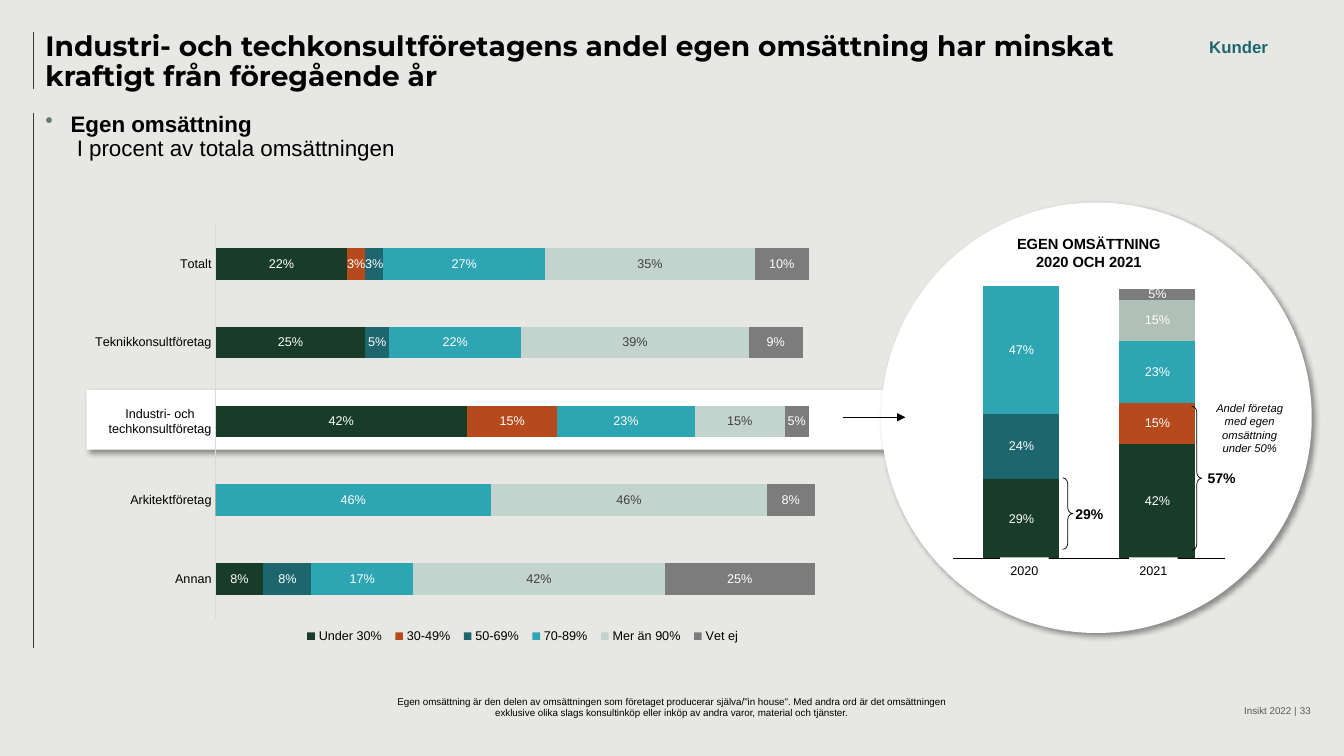
"""Build the slide on consultancies' share of own turnover."""
from lxml import etree
from pptx import Presentation
from pptx import util as u
from pptx.chart.data import CategoryChartData
from pptx.dml.color import RGBColor
from pptx.enum import chart as ch, shapes, text
from pptx.oxml import ns

Inches, Pt = u.Inches, u.Pt
BLACK = RGBColor(0x00, 0x00, 0x00)
WHITE = RGBColor(0xFF, 0xFF, 0xFF)
PAPER = RGBColor(0xE7, 0xE8, 0xE4)
RULE = RGBColor(0x32, 0x3E, 0x39)
AXIS = RGBColor(0xD9, 0xD9, 0xD9)
DARK = RGBColor(0x40, 0x40, 0x40)
FOOTER = RGBColor(0x59, 0x59, 0x59)
FOREST = RGBColor(0x19, 0x3C, 0x29)
RUST = RGBColor(0xB7, 0x4A, 0x1D)
PETROL = RGBColor(0x1D, 0x66, 0x6E)
TEAL = RGBColor(0x2E, 0xA5, 0xB3)
MIST = RGBColor(0xC3, 0xD4, 0xCF)
SAGE = RGBColor(0xB0, 0xBF, 0xB7)
GREY = RGBColor(0x7C, 0x7C, 0x7C)
CENTER, RIGHT = text.PP_ALIGN.CENTER, text.PP_ALIGN.RIGHT

COMPANIES = ["Totalt", "Teknikkonsultföretag", "Industri- och\ntechkonsultföretag",
             "Arkitektföretag", "Annan"]
BY_COMPANY = [
    ("Under 30%", [0.22, 0.25, 0.42, 0, 0.08], FOREST, WHITE, {}),
    ("30-49%", [0.03, 0, 0.15, 0, 0], RUST, WHITE, {}),
    ("50-69%", [0.03, 0.04, 0, 0, 0.08], PETROL, WHITE, {1: "5%"}),
    ("70-89%", [0.27, 0.22, 0.23, 0.46, 0.17], TEAL, WHITE, {}),
    ("Mer än 90%", [0.35, 0.38, 0.15, 0.46, 0.42], MIST, DARK, {1: "39%"}),
    ("Vet ej", [0.09, 0.09, 0.04, 0.08, 0.25], GREY, WHITE, {0: "10%", 2: "5%"}),
]
YEARS = ["2020", "2021"]
BY_YEAR = [
    ("Under 30%", [0.29, 0.42], FOREST, WHITE, {}),
    ("30-49%", [0, 0.15], RUST, WHITE, {}),
    ("50-69%", [0.24, 0], PETROL, WHITE, {}),
    ("70-89%", [0.47, 0.23], TEAL, WHITE, {}),
    ("Mer än 90%", [0, 0.15], SAGE, WHITE, {}),
    ("Vet ej", [0, 0.04], GREY, WHITE, {1: "5%"}),
]


def add_xml(parent, tag, **attrs):
    """Append an XML element and return it."""
    return etree.SubElement(parent, ns.qn(tag), attrs)


def set_font(font, size, color=BLACK, bold=False, italic=False, name="Arial"):
    """Format a font."""
    font.name, font.size, font.bold, font.italic = name, Pt(size), bold, italic
    font.color.rgb = color


def add_run(p, content, size, **style):
    """Add one formatted run to a paragraph."""
    r = p.add_run()
    r.text = content
    set_font(r.font, size, **style)


def add_text(s, box, content, size, align=CENTER, inset=True, **style):
    """Add a wrapped text box with one run and return its paragraph."""
    tf = s.shapes.add_textbox(*map(Inches, box)).text_frame
    tf.word_wrap = True
    if not inset:
        clear_insets(tf)
    p = tf.paragraphs[0]
    p.alignment = align
    add_run(p, content, size, **style)
    return p


def clear_insets(tf):
    """Remove the inner margins of a text frame."""
    tf.margin_left = tf.margin_top = tf.margin_right = tf.margin_bottom = 0


def add_line(s, start, end, color, arrow=False):
    """Add a thin straight line, with an arrowhead if asked."""
    c = s.shapes.add_connector(shapes.MSO_CONNECTOR.STRAIGHT, *map(Inches, start + end))
    c.line.color.rgb, c.line.width = color, Pt(0.5)
    if arrow:
        add_xml(c.line._get_or_add_ln(), "a:tailEnd", type="triangle")
    add_xml(c._element.spPr, "a:effectLst")


def add_panel(s, kind, box, shadow=False):
    """Add a white borderless shape."""
    sp = s.shapes.add_shape(kind, *map(Inches, box))
    sp.shadow.inherit = False
    sp.fill.solid()
    sp.fill.fore_color.rgb = WHITE
    sp.line.fill.background()
    if shadow:
        effects = sp._element.spPr.find(ns.qn("a:effectLst"))
        outer = add_xml(effects, "a:outerShdw", blurRad=str(Pt(4)), dist=str(Pt(3)),
                        dir="2700000", algn="tl", rotWithShape="0")
        add_xml(add_xml(outer, "a:srgbClr", val="000000"), "a:alpha", val="40000")
    return sp


def add_year(s, left, year):
    """Add a year label below a column."""
    sp = add_panel(s, shapes.MSO_SHAPE.RECTANGLE, (left, 5.53, 0.48, 0.25))
    sp.text_frame.word_wrap = False
    p = sp.text_frame.paragraphs[0]
    p.alignment = CENTER
    add_run(p, year, 9)


def add_brace(s, box):
    """Add a thin right brace."""
    sp = s.shapes.add_shape(shapes.MSO_SHAPE.RIGHT_BRACE, *map(Inches, box))
    sp.shadow.inherit = False
    sp.adjustments[0], sp.adjustments[1] = 0.59, 0.5
    sp.fill.background()
    sp.line.color.rgb, sp.line.width = BLACK, Pt(0.5)


def set_layout(parent, index, target=None, **fractions):
    """Fix the place of a chart part as fractions of the chart."""
    for old in parent.findall(ns.qn("c:layout")):
        parent.remove(old)
    layout = etree.Element(ns.qn("c:layout"))
    parent.insert(index, layout)
    manual = add_xml(layout, "c:manualLayout")
    if target:
        add_xml(manual, "c:layoutTarget", val=target)
    for name in ("xMode", "yMode"):
        add_xml(manual, f"c:{name}", val="edge")
    for name, value in fractions.items():
        add_xml(manual, f"c:{name}", val=str(value))


def add_stacked(s, kind, box, cats, rows, gap, axis_color):
    """Add a stacked percentage chart and return it."""
    data = CategoryChartData(number_format="0%")
    data.categories = cats
    for name, values, *_ in rows:
        data.add_series(name, values)
    chart = s.shapes.add_chart(kind, *map(Inches, box), data).chart
    set_font(chart.font, 10)
    chart.has_title = chart.has_legend = False
    plot = chart.plots[0]
    plot.gap_width, plot.overlap, plot.vary_by_categories = gap, 100, False
    values_axis, cat_axis = chart.value_axis, chart.category_axis
    values_axis.minimum_scale, values_axis.maximum_scale = 0, 1
    values_axis.has_major_gridlines = values_axis.visible = False
    cat_axis.major_tick_mark = ch.XL_TICK_MARK.NONE
    cat_axis.format.line.color.rgb, cat_axis.format.line.width = axis_color, Pt(0.75)
    set_font(cat_axis.tick_labels.font, 9)
    for series, (_, _, color, label_color, custom) in zip(plot.series, rows):
        series.format.fill.solid()
        series.format.fill.fore_color.rgb = color
        labels = series.data_labels
        labels.show_value, labels.position = True, ch.XL_LABEL_POSITION.CENTER
        labels.number_format, labels.number_format_is_linked = "0%;;", False
        set_font(labels.font, 9, label_color)
        for index, content in custom.items():
            label = series.points[index].data_label
            add_run(label.text_frame.paragraphs[0], content, 9, color=label_color)
            label.position = ch.XL_LABEL_POSITION.CENTER
    return chart


def add_heading(s):
    """Add the title and the bulleted chart heading."""
    title = s.shapes.title
    title.left, title.top, title.width, title.height = map(Inches, (0.45, 0.32, 10.86, 0.56))
    tf = title.text_frame
    clear_insets(tf)
    tf.word_wrap, tf.auto_size = True, text.MSO_AUTO_SIZE.NONE
    tf.vertical_anchor = text.MSO_ANCHOR.TOP
    p = tf.paragraphs[0]
    p.alignment, p.line_spacing = text.PP_ALIGN.LEFT, 0.9
    add_run(p, "Industri- och techkonsultföretagens andel egen omsättning har minskat "
            "kraftigt från föregående år", 20, bold=True, name="Montserrat")
    p = add_text(s, (0.45, 1.12, 8.52, 0.56), "Egen omsättning", 16,
                 text.PP_ALIGN.LEFT, inset=False, bold=True)
    p.line_spacing = 0.9
    p.add_line_break()
    add_xml(p._p.find(ns.qn("a:br")), "a:rPr", sz="1600")
    add_run(p, " I procent av totala omsättningen", 16)
    pPr = p._p.get_or_add_pPr()
    pPr.set("marL", str(Inches(0.25)))
    pPr.set("indent", str(Inches(-0.25)))
    add_xml(add_xml(pPr, "a:buClr"), "a:srgbClr", val="657B71")
    add_xml(pPr, "a:buChar", char="•")


def main():
    """Build and save the slide."""
    prs = Presentation()
    prs.slide_width, prs.slide_height = Inches(13.33), Inches(7.5)
    s = prs.slides.add_slide(prs.slide_layouts[5])
    s.background.fill.solid()
    s.background.fill.fore_color.rgb = PAPER
    add_heading(s)
    for top, bottom in ((0.32, 0.88), (1.12, 6.43)):
        add_line(s, (0.33, top), (0.33, bottom), RULE)
    add_panel(s, shapes.MSO_SHAPE.RECTANGLE, (0.86, 3.87, 8.14, 0.59), shadow=True)
    add_panel(s, shapes.MSO_SHAPE.OVAL, (8.74, 2.01, 4.27, 4.27), shadow=True)
    bars = add_stacked(s, ch.XL_CHART_TYPE.BAR_STACKED, (0.8, 2.14, 7.43, 4.39),
                       COMPANIES, BY_COMPANY, 150, AXIS)
    bars.category_axis.reverse_order = bars.has_legend = True
    bars.legend.position = ch.XL_LEGEND_POSITION.BOTTOM
    bars.legend.include_in_layout = False
    set_font(bars.legend.font, 9)
    set_layout(bars.legend._element, 1, x=0.29, y=0.92, w=0.6, h=0.06)
    set_layout(bars._chartSpace.chart.plotArea, 0, "inner", x=0.18, y=0.02, w=0.8, h=0.89)
    columns = add_stacked(s, ch.XL_CHART_TYPE.COLUMN_STACKED, (9.4, 2.78, 2.81, 3),
                          YEARS, BY_YEAR, 79, BLACK)
    columns.category_axis.tick_label_position = ch.XL_TICK_LABEL_POSITION.NONE
    set_layout(columns._chartSpace.chart.plotArea, 0, "inner", x=0.02, y=0.02, w=0.96, h=0.9)
    for left, year in zip((9.92, 11.2), YEARS):
        add_year(s, left, year)
    add_brace(s, (10.54, 4.74, 0.1, 0.71))
    add_brace(s, (11.82, 4.03, 0.1, 1.43))
    add_text(s, (10.55, 4.97, 0.51, 0.27), "29%", 10, bold=True)
    add_text(s, (11.86, 4.61, 0.51, 0.27), "57%", 10, bold=True)
    add_line(s, (8.36, 4.14), (8.98, 4.14), BLACK, arrow=True)
    add_text(s, (11.92, 3.93, 0.95, 0.64), "Andel företag med egen omsättning under 50%",
             8, italic=True)
    add_text(s, (9.97, 2.28, 1.66, 0.45), "EGEN OMSÄTTNING 2020 OCH 2021", 10.5, bold=True)
    add_text(s, (11.57, 0.32, 1.43, 0.3), "Kunder", 12, color=PETROL, bold=True)
    add_text(s, (3.78, 6.85, 5.76, 0.34), "Egen omsättning är den delen av omsättningen som "
             "företaget producerar själva/\"in house\". Med andra ord är det omsättningen "
             "exklusive olika slags konsultinköp eller inköp av andra varor, material och "
             "tjänster.", 7)
    add_text(s, (8.36, 6.99, 4.5, 0.12), "Insikt 2022 |", 7, RIGHT, inset=False, color=FOOTER)
    add_text(s, (10, 6.99, 3, 0.12), "33", 7, RIGHT, inset=False, color=FOOTER)
    prs.save("out.pptx")


if __name__ == "__main__":
    main()
